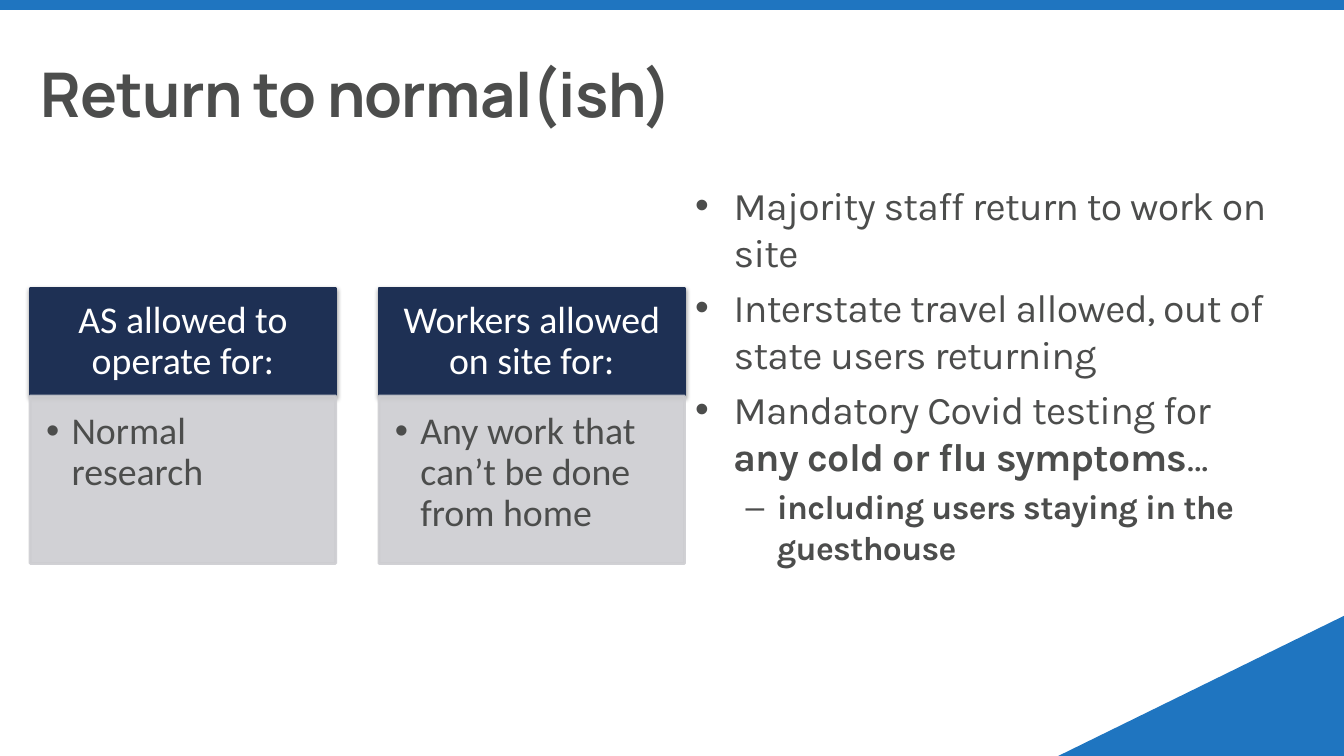
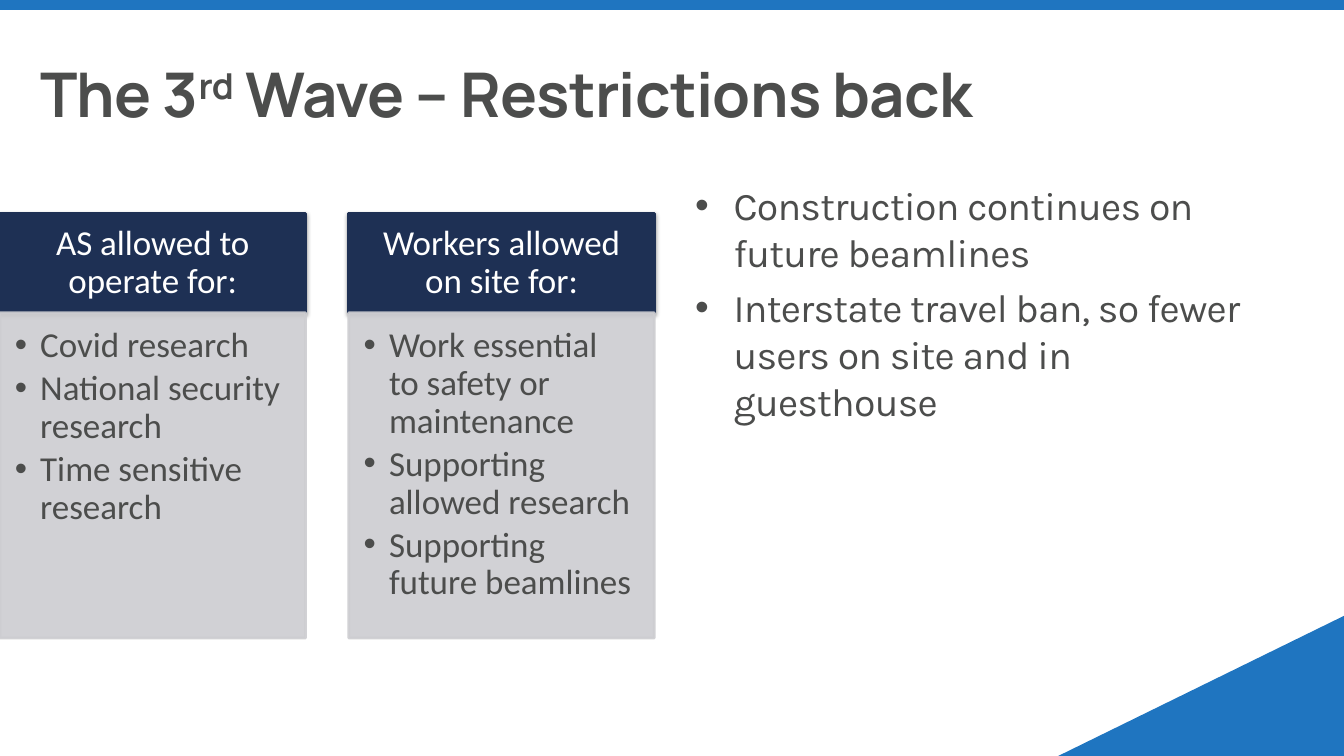
"""Build two slides on site access rules as restrictions eased and came back."""
from lxml import etree
from pptx import Presentation
from pptx.dml.color import RGBColor
from pptx.enum.shapes import MSO_SHAPE as Shape
from pptx.enum.text import MSO_ANCHOR as Anchor, MSO_AUTO_SIZE as Fit, PP_ALIGN as Align
from pptx.oxml.ns import qn
from pptx.util import Cm, Pt

BLUE = RGBColor(0x1F, 0x75, 0xC0)
NAVY = RGBColor(0x1E, 0x30, 0x54)
GREY = RGBColor(0xCD, 0xCD, 0xD1)
DARK = RGBColor(0x4C, 0x4D, 0x4C)
WHITE = RGBColor(0xFF, 0xFF, 0xFF)

BOLD = {"b": "1"}
SUPER = {"baseline": "30000"}
HEADS = ["AS allowed to operate for:", "Workers allowed on site for:"]
SLIDES = [
    {
        "title": [("Return to normal(ish)", {})],
        "left": 0.76, "top": 7.26, "head": 2.72, "body": 4.22, "size": 27,
        "lists": [["Normal research"], ["Any work that can’t be done from home"]],
        "notes": [
            [("Majority staff return to work on site", {})],
            [("Interstate travel allowed, out of state users returning", {})],
            [("Mandatory Covid testing for ", {}), ("any cold or flu symptoms", BOLD), ("…", {})],
        ],
        "subs": [[("including users staying in the guesthouse", BOLD)]],
    },
    {
        "title": [("The 3", {}), ("rd", SUPER), (" Wave – Restrictions back", {})],
        "left": 0, "top": 5.38, "head": 2.5, "body": 8.2, "size": 25,
        "lists": [
            ["Covid research", "National security research", "Time sensitive research"],
            ["Work essential to safety or maintenance", "Supporting allowed research",
             "Supporting future beamlines"],
        ],
        "notes": [
            [("Construction continues on future beamlines", {})],
            [("Interstate travel ban, so fewer users on site and in guesthouse", {})],
        ],
        "subs": [],
    },
]


def write(frame, runs, size, font, color=DARK, bold=False, align=Align.LEFT, line=1.0,
          before=0, after=0, mark=None, left=0, hang=0, track=0, level=0):
    """Add one paragraph made of (text, run attributes) pairs."""
    first = not frame.paragraphs[0].runs
    para = frame.paragraphs[0] if first else frame.add_paragraph()
    if mark:
        props = para._p.get_or_add_pPr()
        props.set("marL", str(Cm(left)))
        props.set("indent", str(-Cm(hang)))
        etree.SubElement(props, qn("a:buFont")).set("typeface", "Arial")
        etree.SubElement(props, qn("a:buChar")).set("char", mark)
    para.level = level
    para.alignment = align
    para.line_spacing = line
    para.space_before = Pt(0 if first else before)
    para.space_after = Pt(after)
    for text, attrs in runs:
        run = para.add_run()
        run.text = text
        run.font.size = Pt(size)
        run.font.name = font
        run.font.color.rgb = color
        run.font.bold = bold
        props = run._r.get_or_add_rPr()
        props.set("spc", str(track))
        for key, value in attrs.items():
            props.set(key, value)


def block(slide, kind, color, x, y, wide, high):
    """Add a plain filled shape, measured in centimetres."""
    shape = slide.shapes.add_shape(kind, Cm(x), Cm(y), Cm(wide), Cm(high))
    shape.shadow.inherit = False
    shape.fill.solid()
    shape.fill.fore_color.rgb = color
    shape.line.color.rgb = color
    shape.line.width = Pt(2)
    return shape


deck = Presentation()
deck.slide_width, deck.slide_height = Cm(33.87), Cm(19.05)

for data in SLIDES:
    slide = deck.slides.add_slide(deck.slide_layouts[5])
    wedge = block(slide, Shape.RIGHT_TRIANGLE, BLUE, 26.67, 15.52, 7.2, 3.53)
    wedge._element.spPr.xfrm.set("flipH", "1")
    band = block(slide, Shape.RECTANGLE, BLUE, 0, 0, 33.87, 0.25)
    for shape in (wedge, band):
        shape.line.fill.background()

    title = slide.shapes.title
    title.left, title.top, title.width, title.height = Cm(0.76), Cm(0.25), Cm(31.39), Cm(3.18)
    frame = title.text_frame
    frame.auto_size = Fit.NONE
    frame.vertical_anchor = Anchor.BOTTOM
    write(frame, data["title"], 44, "Manrope", bold=True, line=0.9, track=-50)

    size = data["size"]
    for col, (name, items) in enumerate(zip(HEADS, data["lists"])):
        x = data["left"] + col * 8.79
        head = block(slide, Shape.RECTANGLE, NAVY, x, data["top"], 7.7, data["head"])
        effects = head._element.spPr.find(qn("a:effectLst"))
        shade = etree.SubElement(effects, qn("a:outerShdw"), blurRad="40000", dist="20000",
                                 dir="5400000", rotWithShape="0")
        black = etree.SubElement(shade, qn("a:srgbClr"), val="000000")
        etree.SubElement(black, qn("a:alpha"), val="38000")
        frame = head.text_frame
        frame.word_wrap = True
        frame.vertical_anchor = Anchor.MIDDLE
        frame.margin_left = frame.margin_right = Cm(size * 0.02)
        frame.margin_top = frame.margin_bottom = Cm(size * 0.01)
        write(frame, [(name, {})], size, "Calibri", color=WHITE, align=Align.CENTER, line=0.9)

        body = block(slide, Shape.RECTANGLE, GREY, x, data["top"] + data["head"], 7.7, data["body"])
        for tint in body._element.spPr.iter(qn("a:srgbClr")):
            etree.SubElement(tint, qn("a:alpha"), val="90000")
        frame = body.text_frame
        frame.word_wrap = True
        frame.vertical_anchor = Anchor.TOP
        frame.margin_left = frame.margin_top = Cm(size * 0.015)
        frame.margin_right = frame.margin_bottom = Cm(size * 0.02)
        for item in items:
            write(frame, [(item, {})], size, "Calibri", line=0.9, after=size * 0.15,
                  mark="•", left=0.64, hang=0.64, level=1)

    notes = slide.shapes.add_textbox(Cm(17.27), Cm(4.45), Cm(15.27), Cm(12.57))
    frame = notes.text_frame
    frame.word_wrap = True
    for runs in data["notes"]:
        write(frame, runs, 28, "Karla", before=5.6, mark="•", left=0.97, hang=0.97, track=-50)
    for runs in data["subs"]:
        write(frame, runs, 24, "Karla", before=4.8, mark="–", left=2.06, hang=0.79,
              track=-50, level=1)

deck.save("out.pptx")
